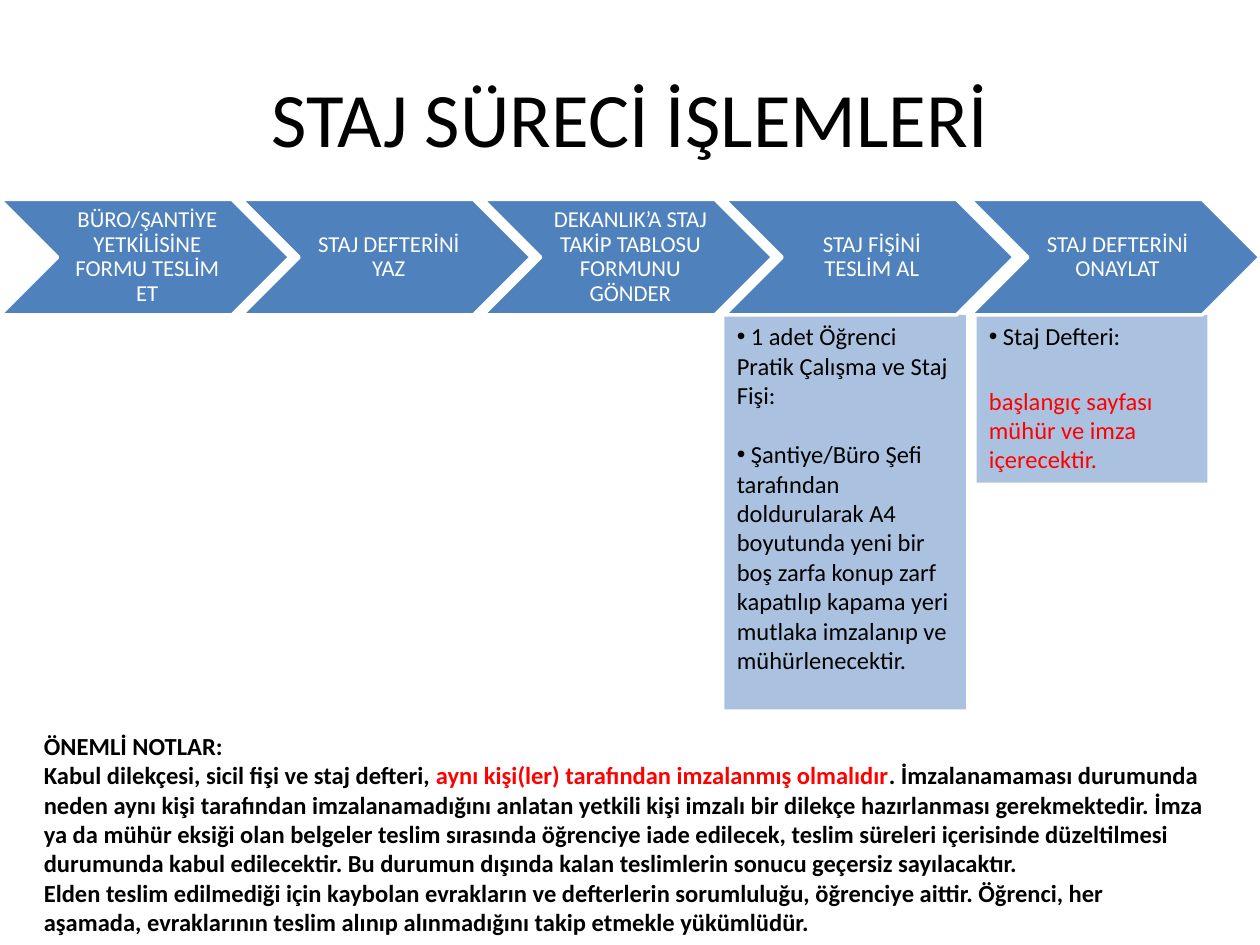
from lxml.etree import SubElement as Sub
from pptx import Presentation
from pptx.dml.color import RGBColor as RGB
from pptx.enum.shapes import MSO_SHAPE as Shape
from pptx.enum.text import MSO_ANCHOR as Anchor, PP_ALIGN as Align
from pptx.oxml.ns import qn
from pptx.util import Pt

BLACK = RGB(0, 0, 0)
WHITE = RGB(255, 255, 255)
RED = RGB(255, 0, 0)
BLUE = RGB(0x4F, 0x81, 0xBD)

STEPS = [
    "BÜRO/ŞANTİYE YETKİLİSİNE FORMU TESLİM ET",
    "STAJ DEFTERİNİ YAZ",
    "DEKANLIK’A STAJ TAKİP TABLOSU FORMUNU GÖNDER",
    "STAJ FİŞİNİ TESLİM AL",
    "STAJ DEFTERİNİ ONAYLAT",
]
TOP, WIDE, HIGH, PITCH = 114, 165.6, 66, 138
LAST = 720 - WIDE  # the last step ends at the slide edge

SLIP = [
    " 1 adet Öğrenci Pratik Çalışma ve Staj Fişi:",
    " Şantiye/Büro Şefi tarafından doldurularak A4 boyutunda yeni bir boş zarfa "
    "konup zarf kapatılıp kapama yeri mutlaka imzalanıp ve mühürlenecektir.",
]
NOTES = [
    [("ÖNEMLİ NOTLAR:", BLACK)],
    [("Kabul dilekçesi, sicil fişi ve staj defteri, ", BLACK),
     ("aynı kişi(ler) tarafından imzalanmış olmalıdır", RED),
     (". İmzalanamaması durumunda neden aynı kişi tarafından imzalanamadığını "
      "anlatan yetkili kişi imzalı bir dilekçe hazırlanması gerekmektedir. İmza "
      "ya da mühür eksiği olan belgeler teslim sırasında öğrenciye iade edilecek, "
      "teslim süreleri içerisinde düzeltilmesi durumunda kabul edilecektir. Bu "
      "durumun dışında kalan teslimlerin sonucu geçersiz sayılacaktır.", BLACK)],
    [("Elden teslim edilmediği için kaybolan evrakların ve defterlerin "
      "sorumluluğu, öğrenciye aittir. Öğrenci, her aşamada, evraklarının teslim "
      "alınıp alınmadığını takip etmekle yükümlüdür.", BLACK)],
]


def apply(item, form):
    for key, val in form.items():
        setattr(item, key, val)


def write(shape, paras, size, bold=False, frame=None, para=None):
    """Fill a shape with paragraphs, each a list of (text, colour) runs."""
    body = shape.text_frame
    apply(body, {"word_wrap": True, "vertical_anchor": Anchor.TOP, **(frame or {})})
    for num, runs in enumerate(paras):
        line = body.add_paragraph() if num else body.paragraphs[0]
        apply(line, {"alignment": Align.LEFT, **(para or {})})
        for text, color in runs:
            run = line.add_run()
            run.text = text
            apply(run.font, {"name": "Calibri", "size": Pt(size), "bold": bold})
            run.font.color.rgb = color
    return body.paragraphs


def add_text(slide, area, paras, size, **form):
    box = slide.shapes.add_textbox(*map(Pt, area))
    write(box, paras, size, **form)


def add_solid(slide, kind, area):
    shape = slide.shapes.add_shape(kind, *map(Pt, area))
    shape.shadow.inherit = False
    shape.fill.solid()
    shape.fill.fore_color.rgb = BLUE
    return shape


def add_step(slide, left, text):
    shape = add_solid(slide, Shape.CHEVRON, (left, TOP, WIDE, HIGH))
    shape.line.color.rgb = WHITE
    shape.line.width = Pt(2)
    edges = {"margin_left": Pt(4.1), "margin_right": Pt(1.4),
             "margin_top": Pt(1.4), "margin_bottom": Pt(1.4)}
    write(shape, [[(text, WHITE)]], 13,
          frame={"vertical_anchor": Anchor.MIDDLE, **edges},
          para={"alignment": Align.CENTER, "line_spacing": 0.9})


def add_panel(slide, area, paras, gap, dots):
    """Add a see-through box whose first `dots` paragraphs have bullets."""
    shape = add_solid(slide, Shape.RECTANGLE, area)
    shape.line.fill.background()
    tint = shape.fill._xPr.find(".//" + qn("a:srgbClr"))
    Sub(tint, qn("a:alpha"), val="48000")
    lines = write(shape, paras, 14)
    for line in lines[1:]:
        line.space_before = Pt(gap)
    for line in lines[:dots]:
        props = line._p.get_or_add_pPr()
        Sub(props, qn("a:buFont"), typeface="Arial")
        Sub(props, qn("a:buChar"), char="•")


def main():
    deck = Presentation()
    apply(deck, {"slide_width": Pt(720), "slide_height": Pt(540)})
    slide = deck.slides.add_slide(deck.slide_layouts[6])
    add_text(slide, (36, 21.6, 648, 90), [[("STAJ SÜRECİ İŞLEMLERİ", BLACK)]], 44,
             frame={"vertical_anchor": Anchor.MIDDLE},
             para={"alignment": Align.CENTER})
    add_panel(slide, (414, 180, 138, 225.4),
              [[(text, BLACK)] for text in SLIP], 17, 2)
    add_panel(slide, (558, 180, 132, 95.8),
              [[(" Staj Defteri:", BLACK)],
               [("başlangıç sayfası mühür ve imza içerecektir.", RED)]], 20, 1)
    add_text(slide, (18, 414, 678, 126), NOTES, 14, bold=True)
    for num, text in enumerate(STEPS):
        add_step(slide, LAST if text == STEPS[-1] else num * PITCH, text)
    deck.save("out.pptx")


if __name__ == "__main__":
    main()
